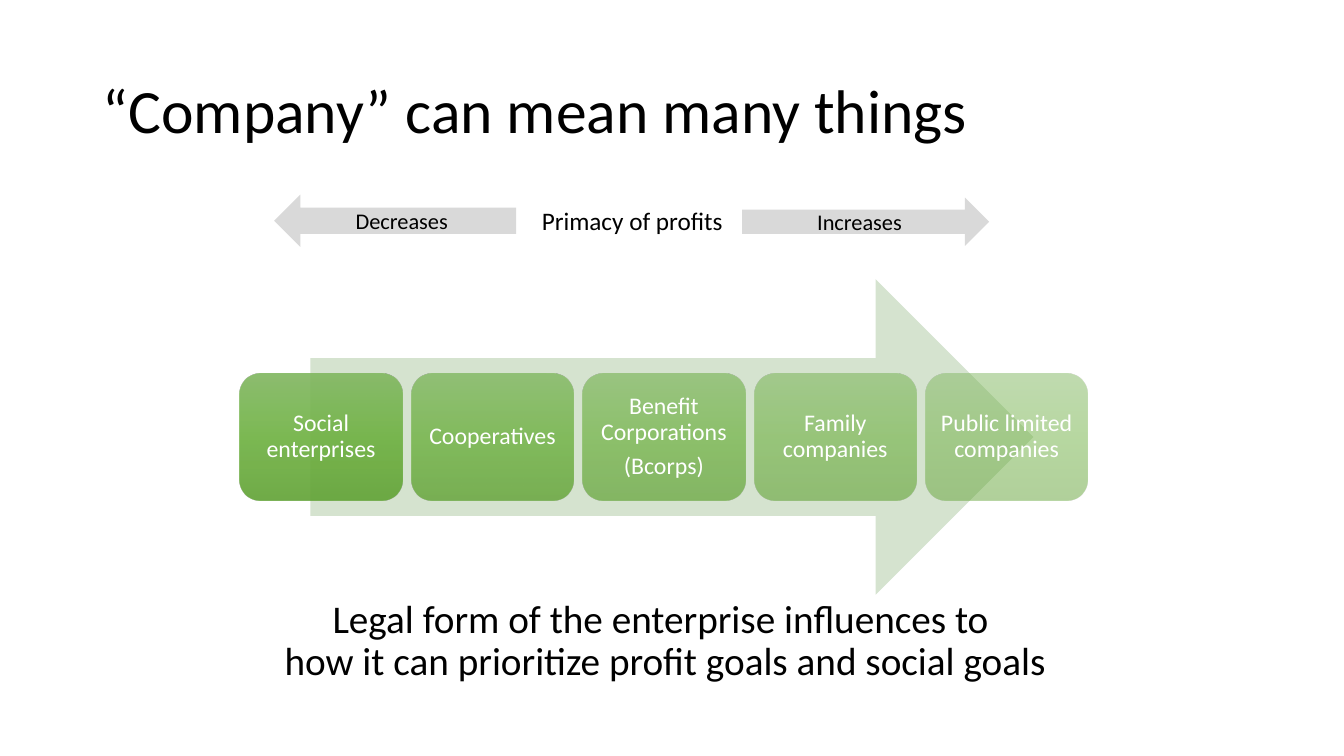
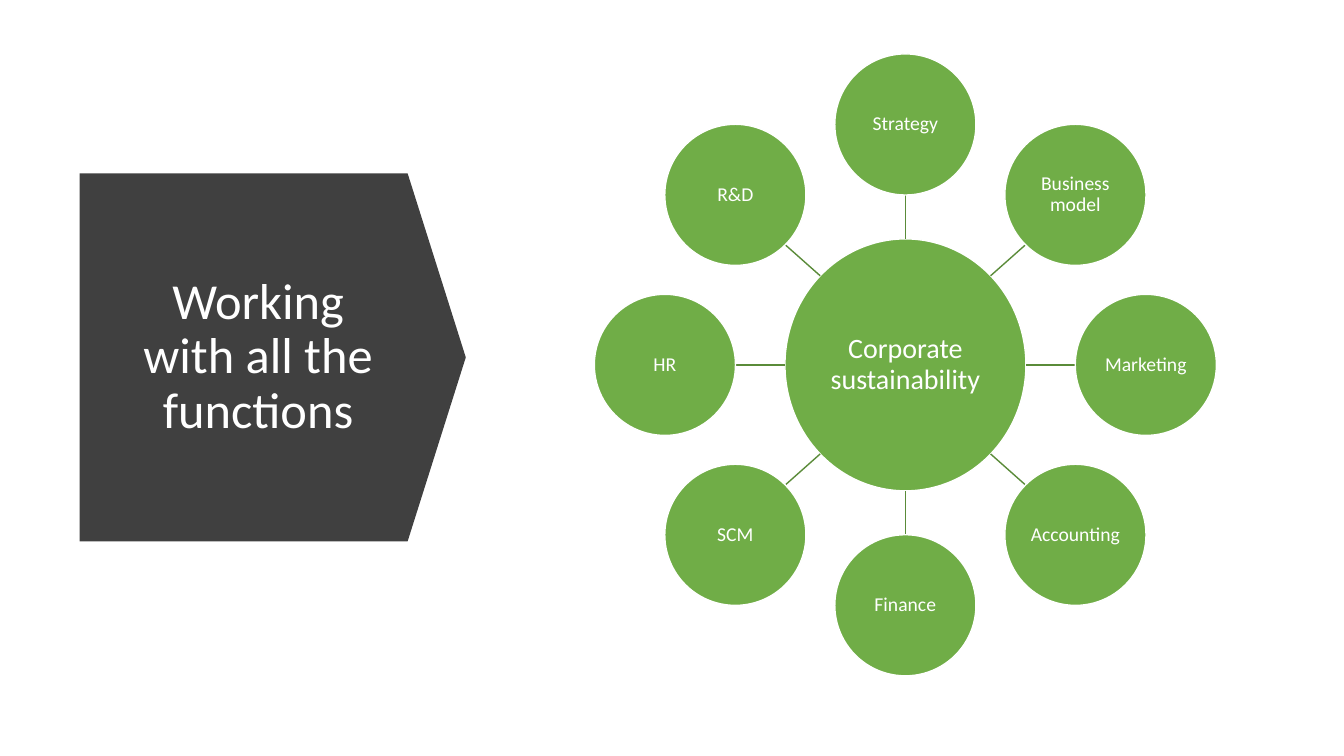
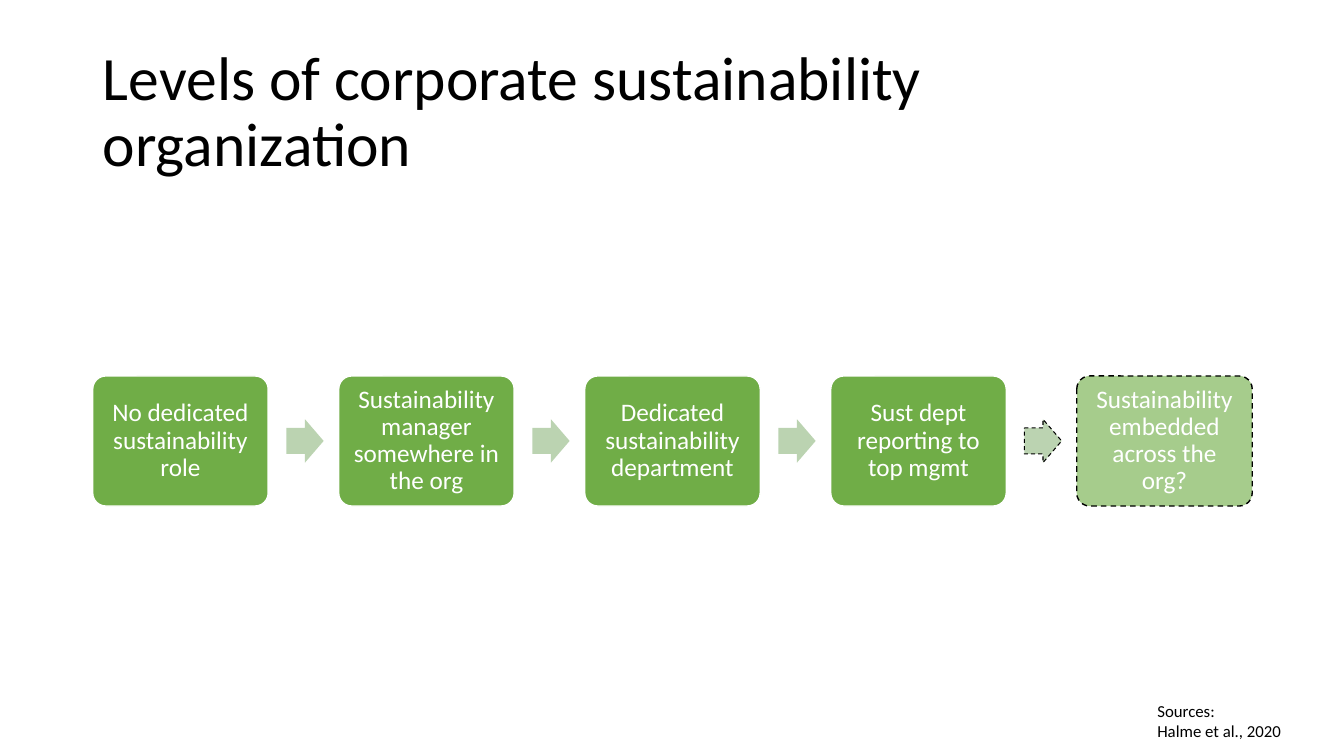
"""Build three slides on corporate sustainability."""
import math

from lxml import etree
from pptx import Presentation
from pptx.dml.color import RGBColor
from pptx.enum import dml, shapes, text
from pptx.oxml import ns
from pptx.util import Inches, Pt

COLOURS = {
    "black": "000000", "white": "FFFFFF", "dark": "404040", "grey": "D9D9D9",
    "green": "70AD47", "spoke": "5A8B39", "pale": "D5E3CF", "step": "BBD3B1",
    "top": "81B861", "middle": "6FB242", "bottom": "62A336",
}
FONT = "Calibri"
WIDTH, HEIGHT = 13.33, 7.5
KINDS = shapes.MSO_SHAPE
CENTER, LEFT = text.PP_ALIGN.CENTER, text.PP_ALIGN.LEFT
TITLE_ONLY, TITLE_BODY = 5, 1
TITLE_AREA = (0.92, 0.4, 11.5, 1.45)
TITLE_STYLE = dict(size=44, align=LEFT, spacing=0.9)
LABEL = dict(colour="white", spacing=0.9)

COMPANY_TITLE = "“Company” can mean many things"
COMPANIES = [
    ["Social enterprises"], ["Cooperatives"], ["Benefit Corporations", "(Bcorps)"],
    ["Family companies"], ["Public limited companies"],
]
OPACITIES = [90, 80, 70, 60, 50]
PROFITS = "Primacy of profits"
TRENDS = [
    ("Decreases", KINDS.LEFT_ARROW, (2.72, 1.93, 2.4, 0.52)),
    ("Increases", KINDS.RIGHT_ARROW, (7.36, 1.96, 2.45, 0.48)),
]
LEGAL_FORM = """Legal form of the enterprise influences to 
how it can prioritize profit goals and social goals"""

FUNCTIONS_TITLE = "Working with all the functions"
HUB = "Corporate sustainability"
FUNCTIONS = ["Strategy", "Business model", "Marketing", "Accounting",
             "Finance", "SCM", "HR", "R&D"]

LEVELS_TITLE = "Levels of corporate sustainability organization"
LEVELS = [
    "No dedicated sustainability role",
    "Sustainability manager somewhere in the org",
    "Dedicated sustainability department",
    "Sust dept reporting to top mgmt",
    "Sustainability embedded across the org?",
]
SOURCES = ["Sources:", "Halme et al., 2020"]


def rgb(name):
    """Return a named colour."""
    return RGBColor.from_string(COLOURS[name])


def place(shape, area):
    """Move and size a shape in inches."""
    for name, value in zip(("left", "top", "width", "height"), area):
        setattr(shape, name, Inches(value))


def write(shape, lines, size=18, colour="black", align=CENTER, spacing=1.0,
          before=0, after=0, inset=None, anchor=text.MSO_ANCHOR.MIDDLE):
    """Fill a shape with formatted paragraphs."""
    frame = shape.text_frame
    frame.text = ""
    settings = dict(word_wrap=True, auto_size=text.MSO_AUTO_SIZE.NONE,
                    vertical_anchor=anchor)
    if inset is not None:
        sides = ("left", "top", "right", "bottom")
        settings.update({f"margin_{side}": Inches(inset) for side in sides})
    for name, value in settings.items():
        setattr(frame, name, value)
    for index, line in enumerate(lines):
        para = frame.add_paragraph() if index else frame.paragraphs[0]
        para.text = line
        formats = dict(alignment=align, line_spacing=spacing,
                       space_before=Pt(before), space_after=Pt(after))
        for name, value in formats.items():
            setattr(para, name, value)
        for span in para.runs:
            for name, value in dict(name=FONT, size=Pt(size)).items():
                setattr(span.font, name, value)
            span.font.color.rgb = rgb(colour)


def outline(line, colour, width, dash=False):
    """Style a line."""
    line.color.rgb = rgb(colour)
    line.width = Pt(width)
    if dash:
        line.dash_style = dml.MSO_LINE.DASH


def add_block(page, kind, area, fill, adjust=()):
    """Add a flat filled shape without outline."""
    block = page.shapes.add_shape(kind, *map(Inches, area))
    block.shadow.inherit = False
    block.fill.solid()
    block.fill.fore_color.rgb = rgb(fill)
    block.line.fill.background()
    for index, value in enumerate(adjust):
        block.adjustments[index] = value
    return block


def add_colour(parent, name, opacity):
    """Append a translucent colour to an XML element."""
    colour = etree.SubElement(parent, ns.qn("a:srgbClr"), val=COLOURS[name])
    etree.SubElement(colour, ns.qn("a:alpha"), val=str(opacity * 1000))


def make_translucent(block, opacity, gradient=()):
    """Replace a solid fill by a translucent colour or vertical gradient."""
    solid = block.element.spPr.find(ns.qn("a:solidFill"))
    if not gradient:
        solid.remove(solid[0])
        add_colour(solid, "green", opacity)
        return
    blend = etree.Element(ns.qn("a:gradFill"), rotWithShape="1")
    stops = etree.SubElement(blend, ns.qn("a:gsLst"))
    for index, name in enumerate(gradient):
        position = index * 100000 // (len(gradient) - 1)
        add_colour(etree.SubElement(stops, ns.qn("a:gs"), pos=str(position)), name, opacity)
    etree.SubElement(blend, ns.qn("a:lin"), ang="5400000", scaled="0")
    solid.getparent().replace(solid, blend)


def add_page(deck, layout, title, area=TITLE_AREA, **style):
    """Add a slide with a formatted title."""
    page = deck.slides.add_slide(deck.slide_layouts[layout])
    place(page.shapes.title, area)
    write(page.shapes.title, [title], **{**TITLE_STYLE, **style})
    return page


def build_companies(deck):
    """Show company forms along an arrow."""
    page = add_page(deck, TITLE_BODY, COMPANY_TITLE)
    add_block(page, KINDS.RIGHT_ARROW, (3.08, 2.77, 7.17, 3.13), "pale")
    for index, (lines, opacity) in enumerate(zip(COMPANIES, OPACITIES)):
        box = add_block(page, KINDS.ROUNDED_RECTANGLE,
                        (2.38 + 1.7 * index, 3.71, 1.61, 1.25), "green")
        make_translucent(box, opacity, ("top", "middle", "bottom"))
        write(box, lines, size=17, after=6, inset=0.07, **LABEL)
    caption = page.shapes.add_textbox(*map(Inches, (5.21, 1.99, 2.12, 0.4)))
    write(caption, [PROFITS])
    for label, kind, area in TRENDS:
        write(add_block(page, kind, area, "grey"), [label], size=16)
    body = page.placeholders[1]
    place(body, (1.07, 5.9, 11.05, 1.03))
    write(body, [LEGAL_FORM], size=28, spacing=0.9, before=10,
          anchor=text.MSO_ANCHOR.TOP)
    properties = body.text_frame.paragraphs[0]._p.get_or_add_pPr()
    for name in ("marL", "indent"):
        properties.set(name, "0")
    etree.SubElement(properties, ns.qn("a:buNone"))


def build_functions(deck):
    """Show business functions around a hub."""
    page = add_page(deck, TITLE_ONLY, FUNCTIONS_TITLE, (1.12, 2.15, 2.88, 2.79),
                    size=36, align=CENTER, colour="white")
    banner = add_block(page, KINDS.DOWN_ARROW, (0.88, 1.63, 3.65, 3.83), "dark", (1, 0.158))
    banner.rotation = 270
    banner.element.addnext(page.shapes.title.element)

    center_x, center_y, orbit, radius = 8.98, 3.62, 2.385, 0.7
    hub_x, hub_y = 1.195, 1.25

    def add_circle(label, x, y, half_width, half_height, size):
        area = (x - half_width, y - half_height, 2 * half_width, 2 * half_height)
        circle = add_block(page, KINDS.OVAL, area, "green")
        outline(circle.line, "white", 1)
        write(circle, [label], size=size, inset=0.01, after=round(size * 0.35), **LABEL)

    add_circle(HUB, center_x, center_y, hub_x, hub_y, 20)
    for index, label in enumerate(FUNCTIONS):
        angle = math.tau * index / len(FUNCTIONS)
        across, down = math.sin(angle), -math.cos(angle)
        reach = orbit - radius
        ends = (center_x + hub_x * across, center_y + hub_y * down,
                center_x + reach * across, center_y + reach * down)
        spoke = page.shapes.add_connector(shapes.MSO_CONNECTOR.STRAIGHT, *map(Inches, ends))
        outline(spoke.line, "spoke", 1)
        etree.SubElement(spoke.element.spPr, ns.qn("a:effectLst"))
        add_circle(label, center_x + orbit * across, center_y + orbit * down,
                   radius, radius, 14)


def build_levels(deck):
    """Show the steps of sustainability organization."""
    page = add_page(deck, TITLE_ONLY, LEVELS_TITLE)
    left, _, span, _ = TITLE_AREA
    width, last = 1.74, len(LEVELS) - 1
    pitch = (span - width) / last
    for index, label in enumerate(LEVELS):
        x, final = left + pitch * index, index == last
        if index:
            arrow = add_block(page, KINDS.RIGHT_ARROW, (x - 0.52, 4.16, 0.37, 0.43),
                              "step", (0.6, 0.5))
            if final:
                outline(arrow.line, "black", 0.75, dash=True)
        box = add_block(page, KINDS.ROUNDED_RECTANGLE, (x, 3.73, width, 1.29),
                        "green", (0.1,))
        outline(box.line, "black" if final else "white", 1, dash=final)
        if final:
            make_translucent(box, 62)
        write(box, [label], after=6, inset=0.07, **LABEL)
    note = page.shapes.add_textbox(*map(Inches, (11.38, 6.9, 1.95, 0.5)))
    write(note, SOURCES, size=12, align=LEFT, anchor=text.MSO_ANCHOR.TOP)


def main():
    """Build and save the deck."""
    deck = Presentation()
    deck.slide_width, deck.slide_height = Inches(WIDTH), Inches(HEIGHT)
    for build in (build_companies, build_functions, build_levels):
        build(deck)
    deck.save("out.pptx")


if __name__ == "__main__":
    main()
